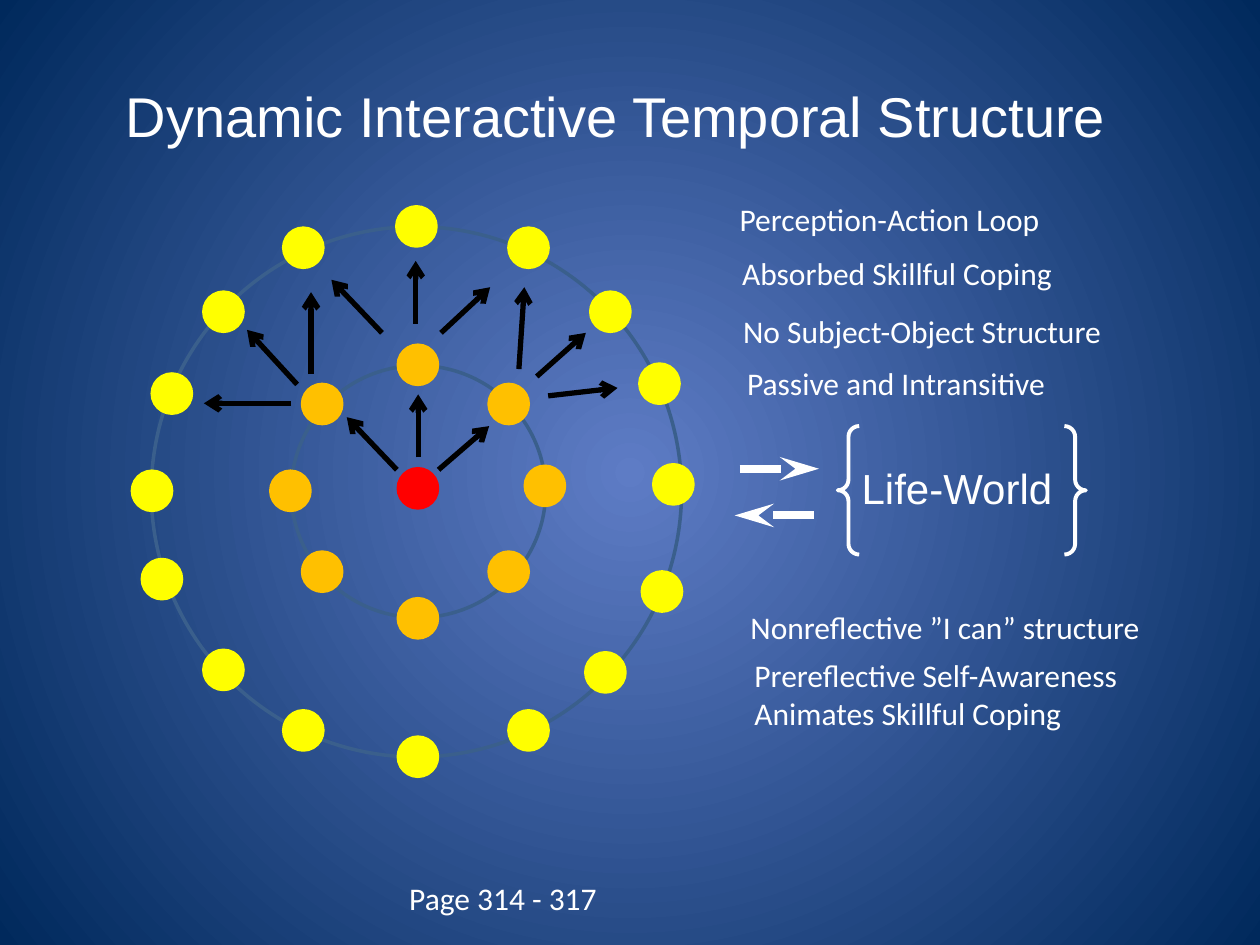
from lxml import etree
from pptx import Presentation
from pptx import util as u
from pptx.dml.color import RGBColor
from pptx.enum import shapes, text
from pptx.oxml.ns import qn

HUES = {
    "glow": "5E7CC5", "deep": "00295C", "ring": "3A5F8C", "core": "FF0000",
    "near": "FFC000", "far": "FFFF00", "ink": "000000", "white": "FFFFFF",
}
DOT = 0.79
KIND = shapes.MSO_SHAPE

# Left and top of each dot, clockwise from the top
NEAR = [(8.03, 6.96), (9.86, 7.75), (10.59, 9.4), (9.86, 11.13),
        (8.03, 12.07), (6.1, 11.13), (5.46, 9.5), (6.1, 7.75)]
FAR = [(8, 4.17), (10.26, 4.6), (11.91, 5.89), (12.9, 7.34),
       (13.18, 9.37), (12.95, 11.53), (11.81, 13.16), (10.26, 14.33),
       (8.03, 14.86), (5.72, 14.33), (4.11, 13.11), (2.87, 11.28),
       (2.67, 9.5), (3.07, 7.54), (4.11, 5.89), (5.72, 4.6)]

# Start and end of each arrow
RAYS = [
    (8.43, 9.22, 8.43, 7.95), (8, 9.47, 6.99, 8.41), (8.84, 9.47, 9.86, 8.59),
    (8.38, 6.53, 8.38, 5.26), (7.7, 6.71, 6.68, 5.64), (8.89, 6.71, 9.88, 5.79),
    (5.99, 7.75, 4.98, 6.65), (6.27, 7.54, 6.27, 5.89), (5.87, 8.13, 4.11, 8.13),
    (10.82, 7.59, 11.81, 6.71), (10.46, 7.44, 10.57, 5.79),
    (11.05, 7.98, 12.45, 7.82),
]
SWAPS = [(14.91, 9.45, 16.51, 9.45), (16.41, 10.39, 14.81, 10.39)]

NOTES = [
    ("Perception-Action Loop", (14.66, 3.91, 8, 1.02)),
    ("Absorbed Skillful Coping", (14.71, 5, 7.19, 1.02)),
    ("No Subject-Object Structure", (14.73, 6.17, 8.2, 1.02)),
    ("Passive and Intransitive", (14.81, 7.21, 9.02, 1.02)),
    ("Nonreflective ”I can” structure", (14.88, 12.14, 8.86, 1.02)),
    ("Prereflective Self-Awareness Animates Skillful Coping",
     (14.96, 13.11, 8.2, 1.8)),
    ("Page 314 - 317", (8, 17.6, 7.21, 1.02)),
]


def hue(name):
    return RGBColor.from_string(HUES[name])


def cm(nums):
    return [u.Cm(n) for n in nums]


class Board:
    def __init__(self, slide, font="Calibri", size=18):
        self.slide, self.font, self.size = slide, font, size

    def glow(self, mid, rim):
        """Fill the background with a circular gradient, mid to rim."""
        fill = self.slide.background.fill
        fill.gradient()
        for stop, name, pos in zip(fill.gradient_stops, (mid, rim), (0, 1)):
            stop.color.rgb = hue(name)
            stop.position = pos
        grad = self.slide.element.find(".//" + qn("a:gradFill"))
        grad.remove(grad.find(qn("a:lin")))
        way = etree.SubElement(grad, qn("a:path"), path="circle")
        etree.SubElement(way, qn("a:fillToRect"),
                         {side: "50000" for side in "ltrb"})

    def shape(self, kind, box, line, width=2, fill=None):
        item = self.slide.shapes.add_shape(kind, *cm(box))
        item.shadow.inherit = False
        item.line.color.rgb = hue(line)
        item.line.width = u.Pt(width)
        if fill:
            item.fill.solid()
            item.fill.fore_color.rgb = hue(fill)
        else:
            item.fill.background()

    def dot(self, left, top, name):
        self.shape(KIND.OVAL, (left, top, DOT, DOT), name, fill=name)

    def arrow(self, ends, name, width, head, span="med"):
        item = self.slide.shapes.add_connector(
            shapes.MSO_CONNECTOR.STRAIGHT, *cm(ends))
        item.line.color.rgb = hue(name)
        item.line.width = u.Pt(width)
        etree.SubElement(item.line._get_or_add_ln(), qn("a:tailEnd"),
                         type=head, w="med", len=span)
        etree.SubElement(item._element.spPr, qn("a:effectLst"))

    def label(self, words, box, font=None, size=None):
        frame = self.slide.shapes.add_textbox(*cm(box)).text_frame
        form = {"word_wrap": True, "text": words,
                "auto_size": text.MSO_AUTO_SIZE.SHAPE_TO_FIT_TEXT}
        for key, val in form.items():
            setattr(frame, key, val)
        face = frame.paragraphs[0].runs[0].font
        form = {"name": font or self.font, "size": u.Pt(size or self.size)}
        for key, val in form.items():
            setattr(face, key, val)
        face.color.rgb = hue("white")


def main():
    deck = Presentation()
    deck.slide_width, deck.slide_height = cm((25.4, 19.05))
    board = Board(deck.slides.add_slide(deck.slide_layouts[6]))
    board.glow("glow", "deep")

    for ring in ((3.05, 4.57, 10.69, 10.69), (5.87, 7.37, 5.13, 5.08)):
        board.shape(KIND.OVAL, ring, "ring")
    for name, spots in (("core", [(8.03, 9.45)]), ("near", NEAR), ("far", FAR)):
        for left, top in spots:
            board.dot(left, top, name)
    for ray in RAYS:
        board.arrow(ray, "ink", 3, "arrow")

    board.label("Life-World", (17.12, 9.19, 4.57, 1.27), "Arial", 24)
    for swap in SWAPS:
        board.arrow(swap, "white", 4.5, "stealth", "lg")
    board.shape(KIND.DOUBLE_BRACE, (16.89, 8.59, 5, 2.59), "white", 2.25)

    board.label("Dynamic Interactive Temporal Structure",
                (2.29, 1.52, 21.23, 1.62), "Arial", 32)
    for words, box in NOTES:
        board.label(words, box)
    deck.save("out.pptx")


if __name__ == "__main__":
    main()
